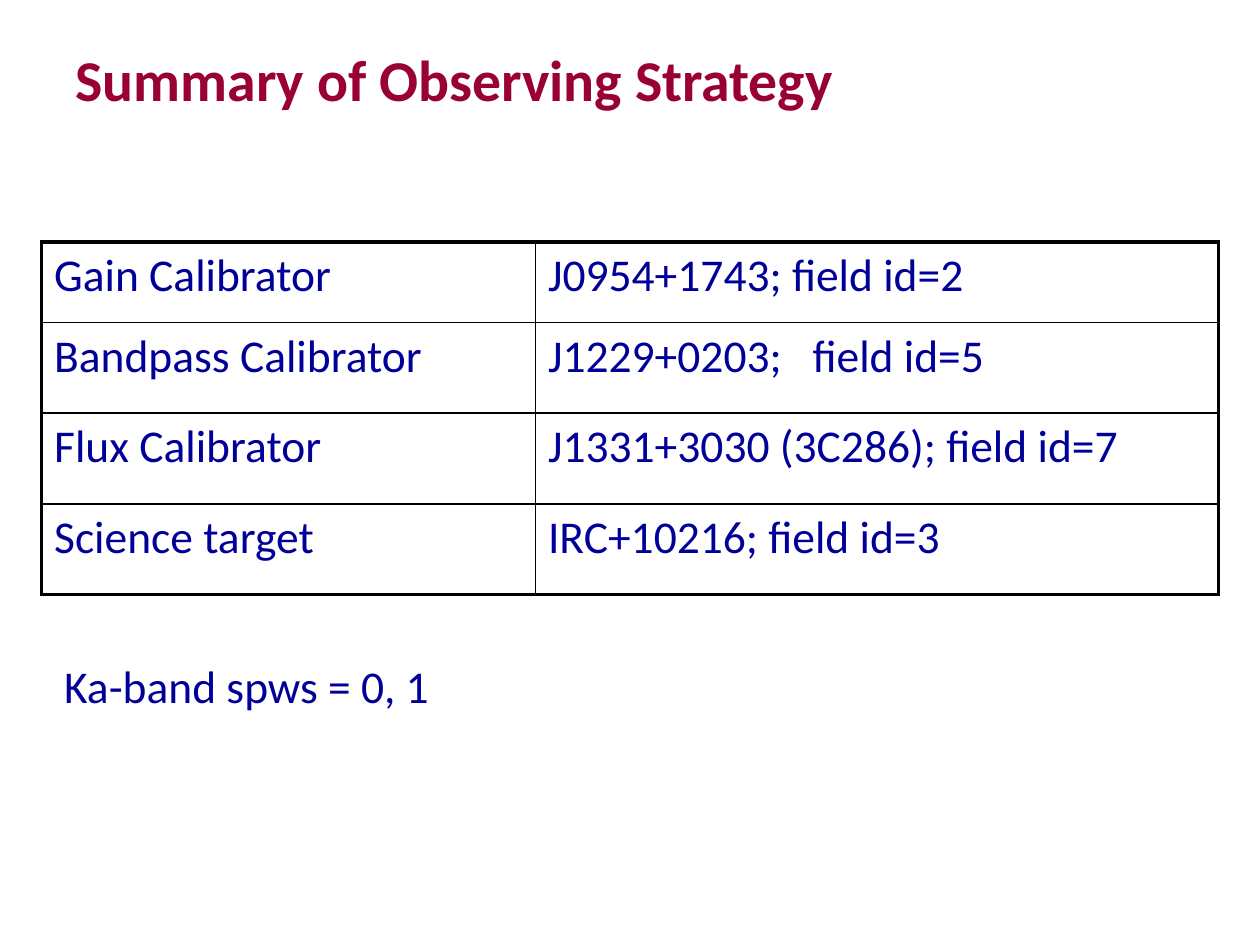
from lxml.etree import SubElement
from pptx import Presentation
from pptx.dml.color import RGBColor
from pptx.enum.text import MSO_ANCHOR as Anchor, MSO_AUTO_SIZE as AutoSize, PP_ALIGN as Align
from pptx.oxml.ns import qn
from pptx.util import Emu, Pt

PX = 9144  # 100 px to the inch
RED, BLUE, BLACK = "990033", "000099", "000000"
THICK, THIN = 2.25, 1


def style(para, size, color, bold=False):
    para.alignment = Align.LEFT
    for span in para.runs:
        span.font.name = "Calibri"
        span.font.size = Pt(size)
        span.font.bold = bold
        span.font.color.rgb = RGBColor.from_string(color)


def border(cell, side, width):
    line = SubElement(cell._tc.get_or_add_tcPr(), qn(f"a:ln{side}"), w=str(Pt(width)))
    fill = SubElement(line, qn("a:solidFill"))
    SubElement(fill, qn("a:srgbClr"), val=BLACK)


deck = Presentation()
deck.slide_width, deck.slide_height = Emu(1000 * PX), Emu(750 * PX)
page = deck.slides.add_slide(deck.slide_layouts[5])

# Title
title = page.shapes.title
title.left, title.top, title.width, title.height = (Emu(n * PX) for n in (50, 0, 900, 125))
title.text_frame.text = "Summary of Observing Strategy"
title.text_frame.auto_size = AutoSize.NONE
title.text_frame.vertical_anchor = Anchor.MIDDLE
style(title.text_frame.paragraphs[0], 33, RED, bold=True)

# Note under the table
note = page.shapes.add_textbox(*(Emu(n * PX) for n in (41, 517, 909, 70)))
note.text_frame.word_wrap = True
note.text_frame.text = "Ka-band spws = 0, 1"
style(note.text_frame.paragraphs[0], 26, BLUE)

# Table of calibrators and target
fields = [
    ("Gain Calibrator", "J0954+1743; field id=2"),
    ("Bandpass Calibrator", "J1229+0203;\tfield id=5"),
    ("Flux Calibrator", "J1331+3030 (3C286); field id=7"),
    ("Science target", "IRC+10216; field id=3"),
]
widths, heights = (392, 542), (64, 72, 72, 72)
table = page.shapes.add_table(
    len(fields), len(widths),
    *(Emu(n * PX) for n in (33, 192, sum(widths), sum(heights)))).table
table.first_row = table.horz_banding = False
for column, width in zip(table.columns, widths):
    column.width = Emu(width * PX)

last_row, last_col = len(fields) - 1, len(widths) - 1
for r, entries in enumerate(fields):
    table.rows[r].height = Emu(heights[r] * PX)
    for c, entry in enumerate(entries):
        cell = table.cell(r, c)
        para = cell.text_frame.paragraphs[0]
        para.text = entry
        style(para, 26, BLUE)
        if "\t" in entry:
            tabs = SubElement(para._p.get_or_add_pPr(), qn("a:tabLst"))
            SubElement(tabs, qn("a:tab"), pos=str(210 * PX), algn="l")
        # Thick frame outside, thin rules inside
        outer = {"L": c == 0, "R": c == last_col, "T": r == 0, "B": r == last_row}
        for side, is_outer in outer.items():
            border(cell, side, THICK if is_outer else THIN)
        cell.fill.background()

deck.save("out.pptx")
